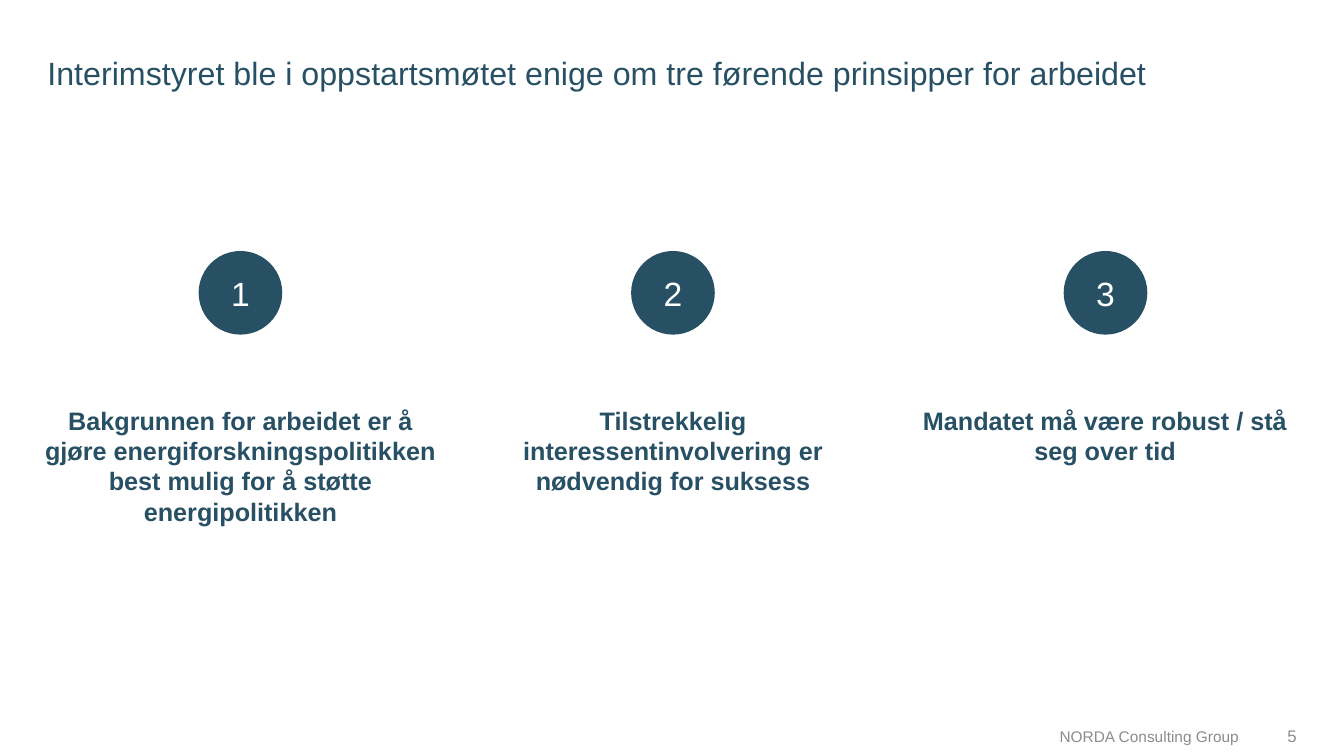
from dataclasses import dataclass

from pptx import Presentation
from pptx.dml.color import RGBColor
from pptx.enum.shapes import MSO_SHAPE
from pptx.enum.text import MSO_ANCHOR, MSO_AUTO_SIZE, PP_ALIGN
from pptx.util import Pt

OVAL = MSO_SHAPE.OVAL
LEFT, MID, RIGHT = PP_ALIGN.LEFT, PP_ALIGN.CENTER, PP_ALIGN.RIGHT
TOP, HALF, BASE = MSO_ANCHOR.TOP, MSO_ANCHOR.MIDDLE, MSO_ANCHOR.BOTTOM
FIXED, GROW = MSO_AUTO_SIZE.NONE, MSO_AUTO_SIZE.SHAPE_TO_FIT_TEXT
PX = 9144


@dataclass(frozen=True)
class Theme:
    font: str = "Arial"
    navy: RGBColor = RGBColor(0x28, 0x50, 0x64)
    grey: RGBColor = RGBColor(0x8C, 0x8C, 0x8C)
    white: RGBColor = RGBColor(0xFF, 0xFF, 0xFF)
    title: int = 23
    badge: int = 24
    label: int = 18
    foot: int = 11
    page: int = 12


class Deck:
    def __init__(self, theme):
        self.theme = theme
        self.prs = Presentation()
        self.prs.slide_width = 1333 * PX
        self.prs.slide_height = 750 * PX
        self.slide = self.prs.slides.add_slide(self.prs.slide_layouts[5])

    def letter(self, shape, text, size, color, align, anchor, bold=False):
        frame = shape.text_frame
        frame.text = text
        frame.word_wrap = True
        frame.auto_size = FIXED
        frame.vertical_anchor = anchor
        para = frame.paragraphs[0]
        para.alignment = align
        font = para.runs[0].font
        font.name = self.theme.font
        font.size = Pt(size)
        font.bold = bold
        font.color.rgb = color
        return frame

    def title(self, text, x, y, w, h):
        shape = self.slide.shapes.title
        shape.left, shape.top = x * PX, y * PX
        shape.width, shape.height = w * PX, h * PX
        frame = self.letter(shape, text, self.theme.title, self.theme.navy, LEFT, TOP)
        frame.paragraphs[0].line_spacing = 0.9

    def box(self, x, y, w, h):
        return self.slide.shapes.add_textbox(x * PX, y * PX, w * PX, h * PX)

    def badge(self, text, x, y, size):
        shape = self.slide.shapes.add_shape(OVAL, x * PX, y * PX, size * PX, size * PX)
        shape.shadow.inherit = False
        shape.fill.solid()
        shape.fill.fore_color.rgb = self.theme.navy
        shape.line.fill.background()
        self.letter(shape, text, self.theme.badge, self.theme.white, MID, HALF)

    def label(self, text, x, y, w, h):
        frame = self.letter(self.box(x, y, w, h), text, self.theme.label,
                            self.theme.navy, MID, TOP, True)
        frame.auto_size = GROW

    def foot(self, text, x, y, w, h):
        frame = self.letter(self.box(x, y, w, h), text, self.theme.foot,
                            self.theme.grey, RIGHT, BASE)
        frame.margin_right = 0

    def page(self, text, x, y, w, h):
        self.letter(self.box(x, y, w, h), text, self.theme.page,
                    self.theme.grey, RIGHT, BASE)

    def save(self):
        self.prs.save("out.pptx")


RULES = [
    ("Bakgrunnen for arbeidet er å gjøre energiforskningspolitikken "
     "best mulig for å støtte energipolitikken", 425, 131),
    ("Tilstrekkelig interessentinvolvering er nødvendig for suksess", 325, 101),
    ("Mandatet må være robust / stå seg over tid", 384, 71),
]
FIRST, STEP, DISC = 238, 429, 83


def main():
    deck = Deck(Theme())
    deck.foot("NORDA Consulting Group", 1019, 698, 210, 47)
    deck.page("5", 1249, 698, 47, 47)
    deck.title("Interimstyret ble i oppstartsmøtet enige om tre førende "
               "prinsipper for arbeidet", 37, 52, 1260, 83)
    for i, (text, wide, high) in enumerate(RULES):
        mid = FIRST + i * STEP
        deck.badge(str(i + 1), mid - DISC // 2, 249, DISC)
        deck.label(text, mid - wide // 2, 397, wide, high)
    deck.save()


if __name__ == "__main__":
    main()
